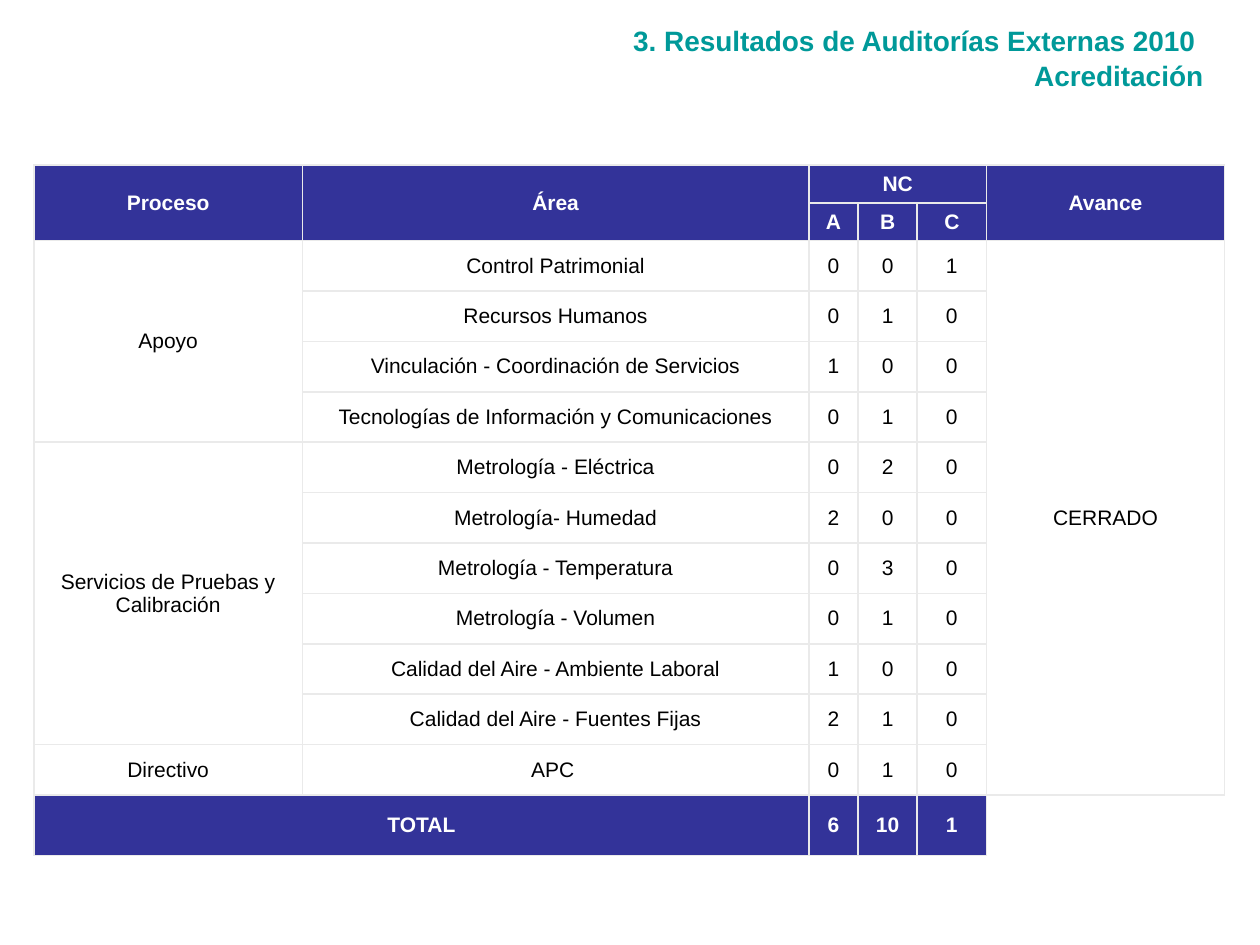
from dataclasses import dataclass

from lxml.etree import SubElement
from pptx import Presentation
from pptx.dml.color import RGBColor
from pptx.enum.text import MSO_ANCHOR as Anchor, MSO_AUTO_SIZE as AutoSize, PP_ALIGN as Align
from pptx.oxml.ns import qn
from pptx.table import Table, _Cell as Cell
from pptx.text.text import Font
from pptx.util import Inches, Pt

COLORS = {
    "title": "009999",
    "band": "333399",
    "band_text": "FFFFFF",
    "body_text": "000000",
    "border": "EAEAEA",
}
COLUMN_WIDTHS = [2.13, 4.02, 0.39, 0.47, 0.55, 1.89]
HEADER_HEIGHT, AREA_HEIGHT, TOTAL_HEIGHT = 0.3, 0.4, 0.48
ALL_SIDES = ("lnL", "lnR", "lnT", "lnB")
AREA_COLUMN, NC_COLUMN, PROGRESS_COLUMN = 1, 2, 5
FIRST_AREA_ROW = 2


@dataclass
class Area:
    name: str
    findings: tuple[int, int, int]


@dataclass
class Process:
    name: str
    areas: list[Area]


PROCESSES = [
    Process("Apoyo", [
        Area("Control Patrimonial", (0, 0, 1)),
        Area("Recursos Humanos", (0, 1, 0)),
        Area("Vinculación - Coordinación de Servicios", (1, 0, 0)),
        Area("Tecnologías de Información y Comunicaciones", (0, 1, 0)),
    ]),
    Process("Servicios de Pruebas y Calibración", [
        Area("Metrología - Eléctrica", (0, 2, 0)),
        Area("Metrología- Humedad", (2, 0, 0)),
        Area("Metrología - Temperatura", (0, 3, 0)),
        Area("Metrología - Volumen", (0, 1, 0)),
        Area("Calidad del Aire - Ambiente Laboral", (1, 0, 0)),
        Area("Calidad del Aire - Fuentes Fijas", (2, 1, 0)),
    ]),
    Process("Directivo", [Area("APC ", (0, 1, 0))]),
]


def format_font(font: Font, size: float, color: str, bold: bool) -> None:
    for attribute, value in {"name": "Arial", "size": Pt(size), "bold": bold}.items():
        setattr(font, attribute, value)
    font.color.rgb = RGBColor.from_string(COLORS[color])


def draw_borders(cell: Cell, sides: tuple[str, ...]) -> None:
    properties = cell._tc.get_or_add_tcPr()
    for side in ALL_SIDES:
        line = SubElement(properties, qn(f"a:{side}"), w=str(Pt(1)))
        if side in sides:
            fill = SubElement(line, qn("a:solidFill"))
            SubElement(fill, qn("a:srgbClr"), val=COLORS["border"])
        else:
            SubElement(line, qn("a:noFill"))


def style_grid(table: Table) -> None:
    total_row, last_column = len(table.rows) - 1, len(table.columns) - 1
    for r in range(total_row + 1):
        for c in range(last_column + 1):
            cell = table.cell(r, c)
            blank = (r, c) == (total_row, last_column)
            draw_borders(cell, ("lnL", "lnT") if blank else ALL_SIDES)
            if not blank and (r < FIRST_AREA_ROW or r == total_row):
                cell.fill.solid()
                cell.fill.fore_color.rgb = RGBColor.from_string(COLORS["band"])
            else:
                cell.fill.background()


def write_cell(table: Table, row: int, column: int, text: object,
               rows: int = 1, columns: int = 1, band: bool = False) -> None:
    cell = table.cell(row, column)
    if rows > 1 or columns > 1:
        cell.merge(table.cell(row + rows - 1, column + columns - 1))
    cell.text = str(text)
    cell.vertical_anchor = Anchor.MIDDLE
    paragraph = cell.text_frame.paragraphs[0]
    paragraph.alignment = Align.CENTER
    format_font(paragraph.runs[0].font, 12, "band_text" if band else "body_text", band)


def write_header(table: Table) -> None:
    for column, label in ((0, "Proceso"), (AREA_COLUMN, "Área"), (PROGRESS_COLUMN, "Avance")):
        write_cell(table, 0, column, label, rows=2, band=True)
    write_cell(table, 0, NC_COLUMN, "NC", columns=3, band=True)
    for column, grade in enumerate("ABC", NC_COLUMN):
        write_cell(table, 1, column, grade, band=True)


def write_processes(table: Table) -> None:
    row = FIRST_AREA_ROW
    for process in PROCESSES:
        write_cell(table, row, 0, process.name, rows=len(process.areas))
        for area in process.areas:
            write_cell(table, row, AREA_COLUMN, area.name)
            for column, count in enumerate(area.findings, NC_COLUMN):
                write_cell(table, row, column, count)
            row += 1
    write_cell(table, FIRST_AREA_ROW, PROGRESS_COLUMN, "CERRADO", rows=row - FIRST_AREA_ROW)


def write_totals(table: Table) -> None:
    total_row = len(table.rows) - 1
    findings = [area.findings for process in PROCESSES for area in process.areas]
    write_cell(table, total_row, 0, "TOTAL", columns=2, band=True)
    for column, counts in enumerate(zip(*findings), NC_COLUMN):
        write_cell(table, total_row, column, sum(counts), band=True)


def add_results(slide) -> None:
    area_count = sum(len(process.areas) for process in PROCESSES)
    heights = [HEADER_HEIGHT] * 2 + [AREA_HEIGHT] * area_count + [TOTAL_HEIGHT]
    table = slide.shapes.add_table(
        len(heights), len(COLUMN_WIDTHS), Inches(0.27), Inches(1.31),
        Inches(sum(COLUMN_WIDTHS)), Inches(sum(heights))).table
    table.first_row = table.horz_banding = False
    for column, width in zip(table.columns, COLUMN_WIDTHS):
        column.width = Inches(width)
    for row, height in zip(table.rows, heights):
        row.height = Inches(height)
    style_grid(table)
    write_header(table)
    write_processes(table)
    write_totals(table)


def add_title(slide) -> None:
    title = slide.shapes.title
    for side, length in {"left": 4.61, "top": 0.12, "width": 5.04, "height": 0.64}.items():
        setattr(title, side, Inches(length))
    frame = title.text_frame
    frame_format = {"word_wrap": True, "vertical_anchor": Anchor.TOP, "auto_size": AutoSize.NONE}
    for attribute, value in frame_format.items():
        setattr(frame, attribute, value)
    heading = frame.paragraphs[0]
    heading.alignment = Align.RIGHT
    heading.line_spacing = 1.05
    heading.add_run().text = "3. Resultados de Auditorías Externas 2010 "
    heading.add_line_break()
    heading.add_run().text = "Acreditación"
    for run in heading.runs:
        format_font(run.font, 16, "title", True)
    format_font(heading.font, 16, "title", True)


def main() -> None:
    deck = Presentation()
    deck.slide_width, deck.slide_height = Inches(10), Inches(7.5)
    slide = deck.slides.add_slide(deck.slide_layouts[5])
    add_results(slide)
    add_title(slide)
    deck.save("out.pptx")


if __name__ == "__main__":
    main()
